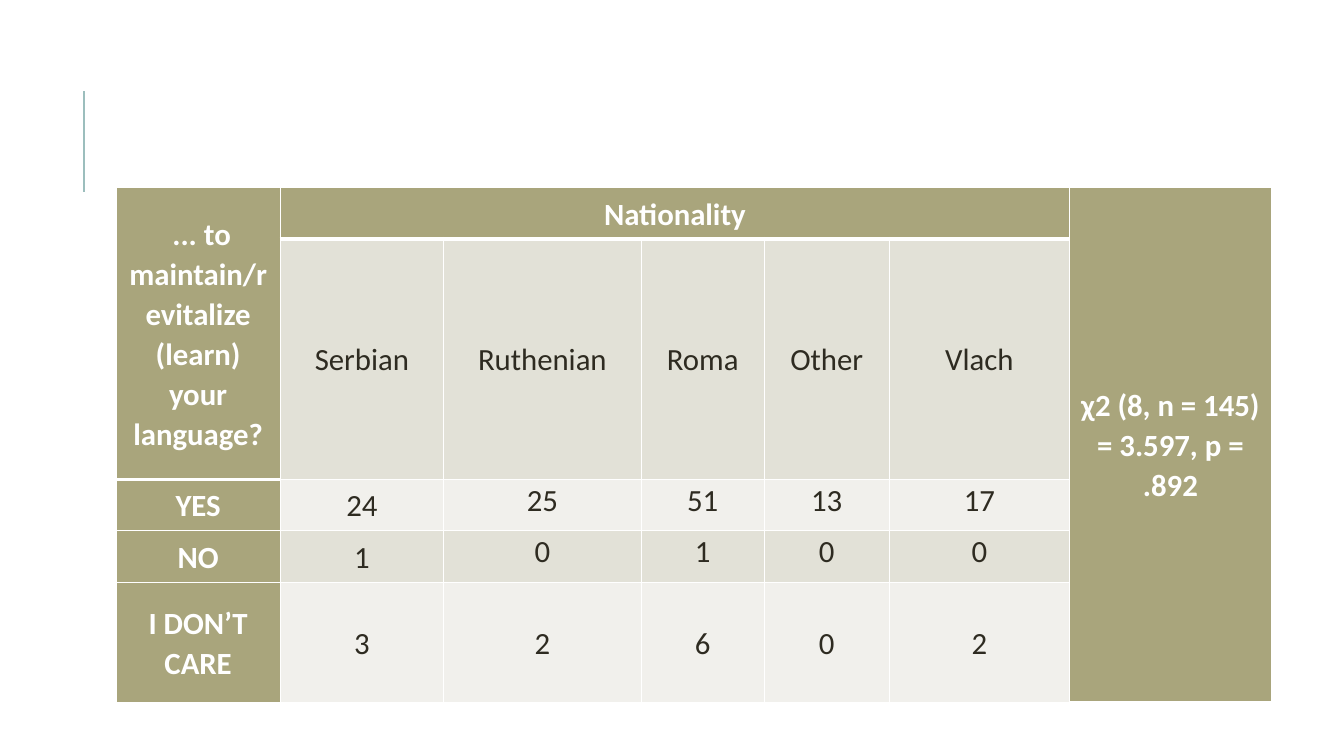
import pptx
import pptx.util
import pptx.dml.color
import pptx.enum.shapes
import pptx.enum.text
import pptx.oxml
import pptx.oxml.ns

Inches, Pt = pptx.util.Inches, pptx.util.Pt
Color = pptx.dml.color.RGBColor.from_string
Anchor = pptx.enum.text.MSO_ANCHOR

# Content
ROWS = [
    [" ... to maintain/revitalize (learn) your language?", "Nationality", "", "", "", "",
     "χ2 (8, n = 145) = 3.597, p = .892"],
    ["", "Serbian", "Ruthenian", "Roma", "Other", "Vlach", ""],
    ["YES", "24", "25", "51", "13", "17", ""],
    ["NO", "1", "0", "1", "0", "0", ""],
    ["I DON’T CARE", "3", "2", "6", "0", "2", ""],
]
SPANS = [((0, 0), (1, 0)), ((0, 1), (0, 5)), ((0, 6), (4, 6))]
WIDTHS = [1.63, 1.62, 1.96, 1.22, 1.24, 1.79, 2]
HEIGHTS = [0.51, 2.38, 0.51, 0.51, 1.19]
LEFT, TOP = 1.15, 1.86
RULE = (0.83, 1.9, 0.83, 0.9)

THEME = {
    "font": "Calibri", "size": 22, "lead": 1.07,
    "head": "A9A57C", "bands": ["F1F0EC", "E2E1D7"],
    "light": "FFFFFF", "dark": "2E2B21", "rule": "9CBEBD",
    "thin": 1, "thick": 3, "stroke": 1.5,
}
CELL = {"margin_left": Inches(0.08), "margin_right": Inches(0.08),
        "margin_top": 0, "margin_bottom": 0}
PARA = {"alignment": pptx.enum.text.PP_ALIGN.CENTER, "line_spacing": THEME["lead"]}
FONT = {"name": THEME["font"], "size": Pt(THEME["size"])}


def apply(item, values):
    for name, value in values.items():
        setattr(item, name, value)


def edge(cell, sides):
    """Add the four cell borders, given as side: points."""
    for spot, (side, width) in enumerate(sides.items()):
        line = pptx.oxml.parse_xml(
            f'<a:ln{side} {pptx.oxml.ns.nsdecls("a")} w="{int(Pt(width))}">'
            f'<a:solidFill><a:srgbClr val="{THEME["light"]}"/></a:solidFill></a:ln{side}>')
        cell._tc.get_or_add_tcPr().insert(spot, line)


def style(cell, row, col, text):
    head = row == 0 or col in (0, 6)
    # The header ends below row 1 in the first column, below row 0 elsewhere
    last = 1 if col == 0 else 0
    thin, thick = THEME["thin"], THEME["thick"]
    above = thick if row == last + 1 and col < 6 else thin
    below = thick if row <= last else thin
    high = row in (2, 3) and 2 <= col <= 5
    apply(cell, CELL)
    cell.vertical_anchor = Anchor.TOP if high else Anchor.MIDDLE
    cell.fill.solid()
    cell.fill.fore_color.rgb = Color(THEME["head"] if head else THEME["bands"][row % 2])
    edge(cell, {"L": thin, "R": thin, "T": above, "B": below})
    if text:
        para = cell.text_frame.paragraphs[0]
        apply(para, PARA)
        run = para.add_run()
        run.text = text
        apply(run.font, {**FONT, "bold": head})
        run.font.color.rgb = Color(THEME["light" if head else "dark"])


def main():
    deck = pptx.Presentation()
    apply(deck, {"slide_width": Inches(13.33), "slide_height": Inches(7.5)})
    slide = deck.slides.add_slide(deck.slide_layouts[6])

    # Accent rule
    rule = slide.shapes.add_connector(
        pptx.enum.shapes.MSO_CONNECTOR.STRAIGHT, *map(Inches, RULE))
    rule.line.color.rgb = Color(THEME["rule"])
    rule.line.width = Pt(THEME["stroke"])
    rule._element.spPr.append(
        pptx.oxml.parse_xml(f'<a:effectLst {pptx.oxml.ns.nsdecls("a")}/>'))

    # Results table
    table = slide.shapes.add_table(
        len(ROWS), len(WIDTHS), Inches(LEFT), Inches(TOP),
        Inches(sum(WIDTHS)), Inches(sum(HEIGHTS))).table
    for col, width in zip(table.columns, WIDTHS):
        col.width = Inches(width)
    for row, height in zip(table.rows, HEIGHTS):
        row.height = Inches(height)
    for first, last in SPANS:
        table.cell(*first).merge(table.cell(*last))
    for row, texts in enumerate(ROWS):
        for col, text in enumerate(texts):
            style(table.cell(row, col), row, col, text)

    deck.save("out.pptx")


if __name__ == "__main__":
    main()
